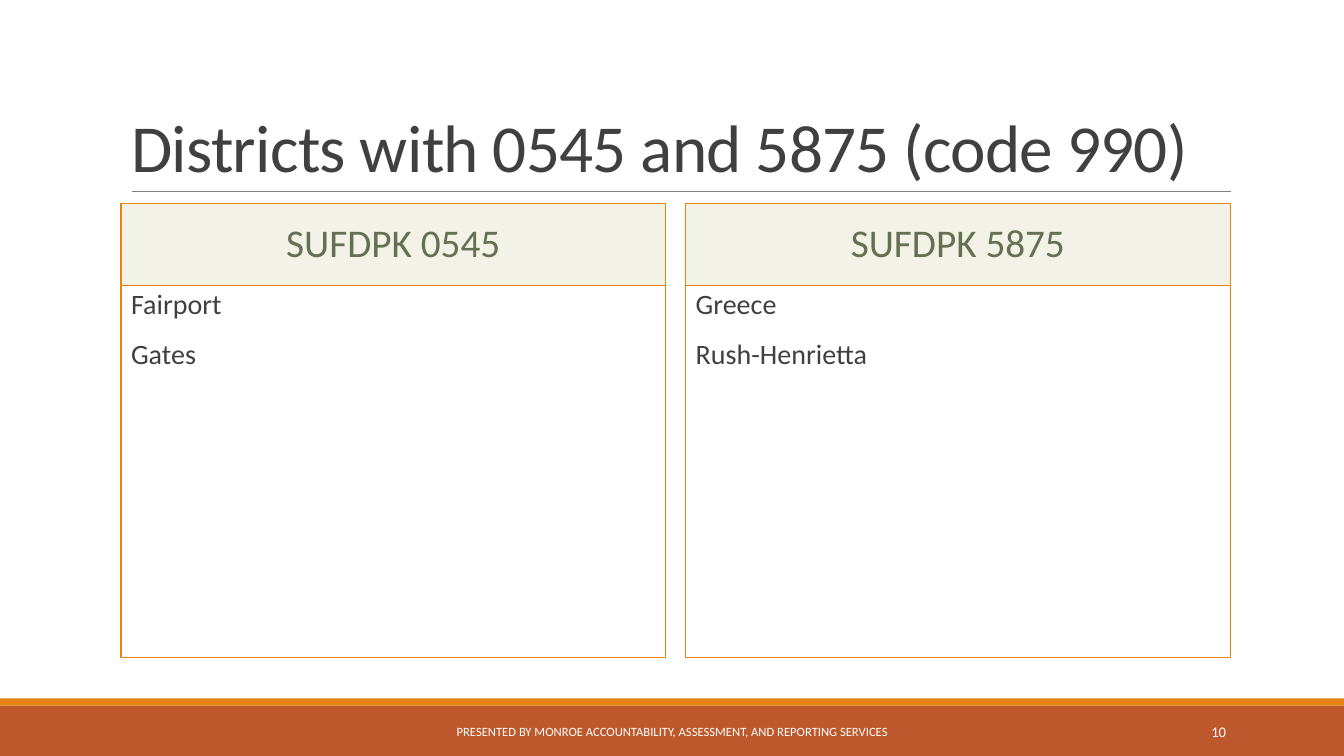
import pptx
import pptx.dml.color
import pptx.enum.shapes
import pptx.enum.text
import pptx.oxml
import pptx.oxml.ns
import pptx.util

RGBColor = pptx.dml.color.RGBColor
Inches = pptx.util.Inches
Pt = pptx.util.Pt
Align = pptx.enum.text.PP_ALIGN
Anchor = pptx.enum.text.MSO_ANCHOR

RUST = RGBColor(0xBD, 0x58, 0x2C)
ORANGE = RGBColor(0xE4, 0x83, 0x12)
CREAM = RGBColor(0xF3, 0xF2, 0xE6)
OLIVE = RGBColor(0x63, 0x70, 0x52)
CHARCOAL = RGBColor(0x40, 0x40, 0x40)
GREY = RGBColor(0x80, 0x80, 0x80)
WHITE = RGBColor(0xFF, 0xFF, 0xFF)

SLIDE_W, SLIDE_H = 13.33, 7.5
MARGIN, COLUMN_W, GUTTER = 1.2, 5.4, 0.2
CONTENT_W = 2 * COLUMN_W + GUTTER
HEADER_H, LIST_H = 0.81, 3.69
STRIPE_H, FOOTER_H = 0.07, 0.5

DISTRICTS = [
    ("SUFDPK 0545", ["Fairport", "Gates"]),
    ("SUFDPK 5875", ["Greece", "Rush-Henrietta"]),
]


def place(shape, left, top, width, height):
    shape.left, shape.top = Inches(left), Inches(top)
    shape.width, shape.height = Inches(width), Inches(height)


def write(shape, lines, size, color, align=Align.LEFT, anchor=Anchor.MIDDLE,
          line_spacing=1.0, before=0, after=0, side_inset=0.1, tracking=0):
    frame = shape.text_frame
    frame.text = "\n".join(lines)
    frame.word_wrap = True
    frame.auto_size = pptx.enum.text.MSO_AUTO_SIZE.NONE
    frame.vertical_anchor = anchor
    frame.margin_left = frame.margin_right = Inches(side_inset)
    frame.margin_top = frame.margin_bottom = Inches(0.05)
    for paragraph in frame.paragraphs:
        paragraph.alignment = align
        paragraph.line_spacing = line_spacing
        paragraph.space_before, paragraph.space_after = Pt(before), Pt(after)
        for run in paragraph.runs:
            run.font.name, run.font.size = "Calibri", Pt(size)
            run.font.bold = False
            run.font.color.rgb = color
            if tracking:
                run._r.get_or_add_rPr().set("spc", str(int(tracking * 100)))


def set_blank_bullets(shape):
    """Hang each line 0.1 inch behind a blank orange bullet."""
    for paragraph in shape.text_frame.paragraphs:
        properties = paragraph._p.get_or_add_pPr()
        properties.set("marL", str(Inches(0.1)))
        properties.set("indent", str(-Inches(0.1)))
        namespace = pptx.oxml.ns.nsdecls("a")
        for bullet in (f'<a:buClr {namespace}><a:srgbClr val="{ORANGE}"/></a:buClr>',
                       f'<a:buChar {namespace} char=" "/>'):
            properties.append(pptx.oxml.parse_xml(bullet))


def add_band(slide, top, height, color):
    band = slide.shapes.add_shape(pptx.enum.shapes.MSO_SHAPE.RECTANGLE, 0, Inches(top),
                                  Inches(SLIDE_W), Inches(height))
    band.shadow.inherit = False
    band.fill.solid()
    band.fill.fore_color.rgb = color
    band.line.fill.background()


def add_footer(slide, top, height):
    add_band(slide, top, height, RUST)
    add_band(slide, top - STRIPE_H, STRIPE_H, ORANGE)
    presenter = "PRESENTED BY MONROE ACCOUNTABILITY, ASSESSMENT, AND REPORTING SERVICES"
    for text, left, width, size, align in (
            (presenter, 4.03, 5.27, 9, Align.CENTER),
            ("10", 10.83, 1.43, 10.5, Align.RIGHT)):
        box = slide.shapes.add_textbox(Inches(left), Inches(top + 0.06),
                                       Inches(width), Inches(0.4))
        write(box, [text], size, WHITE, align)


def add_title(slide, left, top, width, height):
    title = slide.shapes.title
    place(title, left, top, width, height)
    write(title, ["Districts with 0545 and 5875 (code 990)"], 48, CHARCOAL,
          anchor=Anchor.BOTTOM, line_spacing=0.85, tracking=-0.5)
    bottom = Inches(top + height)
    rule = slide.shapes.add_connector(pptx.enum.shapes.MSO_CONNECTOR.STRAIGHT,
                                      Inches(left + 0.11), bottom,
                                      Inches(left + width + 0.01), bottom)
    rule.line.color.rgb = GREY
    rule.line.width = Pt(0.5)
    rule._element.spPr.append(pptx.oxml.parse_xml(
        f'<a:effectLst {pptx.oxml.ns.nsdecls("a")}/>'))


def fill_column(header, listing, code, names, left, top, width):
    place(header, left, top, width, HEADER_H)
    place(listing, left, top + HEADER_H, width, LIST_H)
    header.fill.solid()
    header.fill.fore_color.rgb = CREAM
    for part in (header, listing):
        part.line.color.rgb = ORANGE
        part.line.width = Pt(0.75)
    spacing = dict(line_spacing=0.9, before=12, after=2)
    write(header, [code], 28, OLIVE, Align.CENTER, **spacing)
    write(listing, names, 20, CHARCOAL, anchor=Anchor.TOP, side_inset=0, **spacing)
    set_blank_bullets(listing)


def build_comparison(presentation):
    slide = presentation.slides.add_slide(
        presentation.slide_layouts.get_by_name("Comparison"))
    add_footer(slide, SLIDE_H - FOOTER_H, FOOTER_H)
    add_title(slide, MARGIN, 0.31, CONTENT_W, 1.59)
    holders = list(slide.placeholders)[1:]
    for column, (code, names) in enumerate(DISTRICTS):
        header, listing = holders[2 * column:2 * column + 2]
        fill_column(header, listing, code, names,
                    MARGIN + column * (COLUMN_W + GUTTER), 2.02, COLUMN_W)


def main():
    presentation = pptx.Presentation()
    presentation.slide_width = Inches(SLIDE_W)
    presentation.slide_height = Inches(SLIDE_H)
    build_comparison(presentation)
    presentation.save("out.pptx")


if __name__ == "__main__":
    main()
